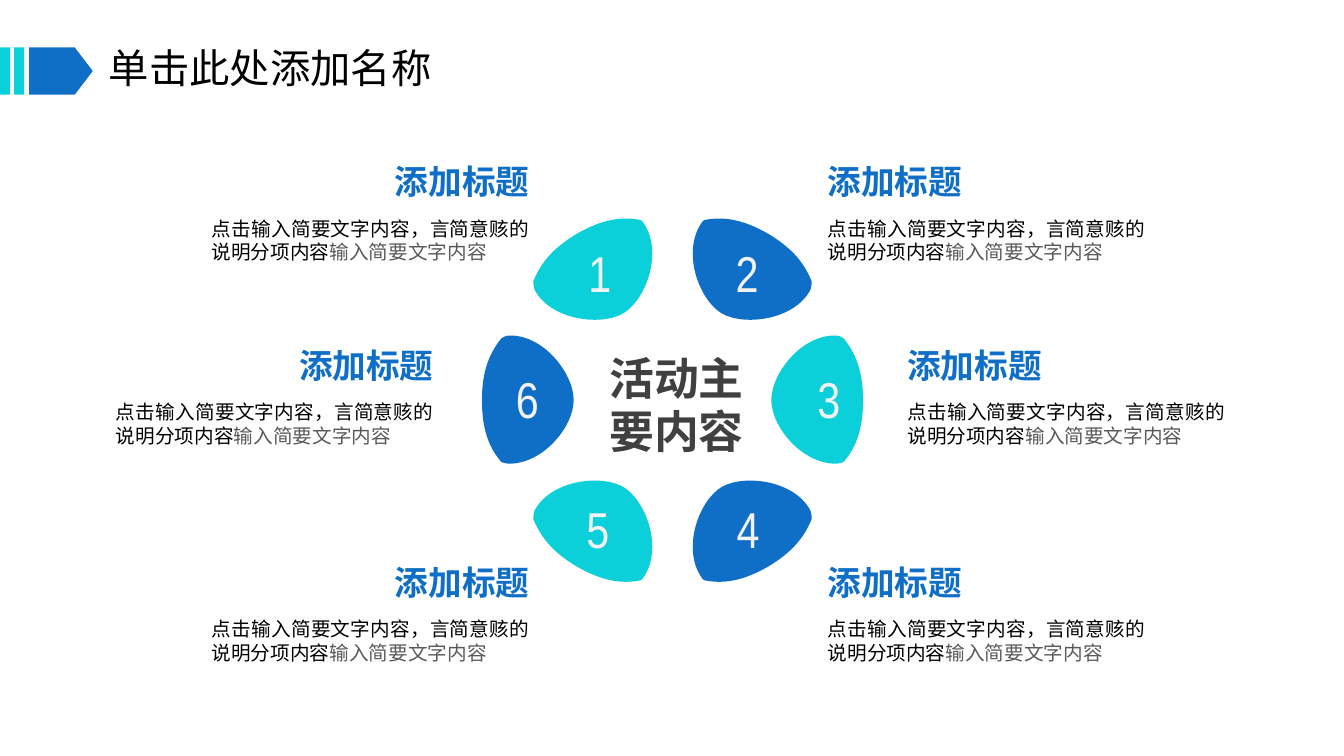
from dataclasses import dataclass

from pptx import Presentation
from pptx.dml.color import RGBColor
from pptx.enum.shapes import MSO_SHAPE as Preset
from pptx.enum.text import PP_ALIGN as Align
from pptx.oxml.ns import qn
from pptx.util import Inches, Pt


@dataclass(frozen=True)
class Theme:
    blue: str = "0F6FC6"
    cyan: str = "0BD0D9"
    black: str = "000000"
    dark: str = "404040"
    grey: str = "595959"
    pale: str = "F2F2F2"
    cjk: str = "Noto Sans CJK SC"
    latin: str = "Arial Narrow"
    title: float = 28.8
    centre: float = 32
    number: float = 36
    heading: float = 24
    body: float = 14


THEME = Theme()
CENTRE_X, CENTRE_Y = 6.67, 3.97
BODY_WIDTH, HEADING_WIDTH = 3.15, 1.94

# Start point, then three points for each Bézier curve.
CORNER_PETAL = [
    (8.05, 2.79),
    (7.98, 2.62), (7.87, 2.47), (7.62, 2.32),
    (7.36, 2.17), (7.17, 2.15), (7, 2.18),
    (6.98, 2.18), (6.95, 2.21), (6.94, 2.24),
    (6.77, 2.53), (6.94, 2.98), (7.16, 3.11),
    (7.39, 3.24), (7.89, 3.17), (8.04, 2.87),
    (8.05, 2.84), (8.05, 2.8), (8.05, 2.79),
]
SIDE_PETAL = [
    (8.37, 3.36),
    (8.48, 3.5), (8.56, 3.67), (8.56, 3.97),
    (8.56, 4.26), (8.49, 4.44), (8.37, 4.58),
    (8.36, 4.59), (8.31, 4.6), (8.29, 4.6),
    (7.95, 4.6), (7.65, 4.23), (7.65, 3.97),
    (7.65, 3.7), (7.96, 3.31), (8.3, 3.33),
    (8.32, 3.33), (8.36, 3.35), (8.37, 3.36),
]

# Outline, mirrored in x, mirrored in y, colour, number centre x and top.
PETALS = [
    (CORNER_PETAL, True, False, THEME.cyan, 5.95, 2.4),
    (CORNER_PETAL, False, False, THEME.blue, 7.41, 2.4),
    (SIDE_PETAL, False, False, THEME.cyan, 8.22, 3.65),
    (CORNER_PETAL, False, True, THEME.blue, 7.42, 4.94),
    (CORNER_PETAL, True, True, THEME.cyan, 5.93, 4.94),
    (SIDE_PETAL, True, False, THEME.blue, 5.23, 3.65),
]

# Left, top, and whether the heading is aligned to the right.
DESCRIPTIONS = [
    (2.1, 1.57, True),
    (8.21, 1.57, False),
    (9, 3.39, False),
    (8.21, 5.54, False),
    (2.1, 5.54, True),
    (1.15, 3.39, True),
]


def add_run(paragraph, text, *, size, color, font=THEME.cjk, bold=False):
    run = paragraph.add_run()
    run.text = text
    run.font.name = font
    run.font.size = Pt(size)
    run.font.bold = bold
    run.font.color.rgb = RGBColor.from_string(color)
    if font == THEME.cjk:
        east_asian = run.font._element.makeelement(qn("a:ea"), {"typeface": font})
        run.font._element.find(qn("a:latin")).addnext(east_asian)


class SlideBuilder:
    def __init__(self, slide, theme):
        self.slide = slide
        self.theme = theme

    def paint(self, shape, color):
        shape.shadow.inherit = False
        shape.fill.solid()
        shape.fill.fore_color.rgb = RGBColor.from_string(color)
        shape.line.fill.background()

    def text(self, runs, left, top, width, height, *, size, align=Align.LEFT,
             wrap=True, spacing=None, **style):
        """Place one paragraph made of (text, colour) runs."""
        box = self.slide.shapes.add_textbox(
            Inches(left), Inches(top), Inches(width), Inches(height))
        frame = box.text_frame
        frame.word_wrap = wrap
        frame.margin_left = frame.margin_top = 0
        frame.margin_right = frame.margin_bottom = 0
        paragraph = frame.paragraphs[0]
        paragraph.alignment = align
        if spacing:
            paragraph.line_spacing = Pt(spacing)
        for words, color in runs:
            add_run(paragraph, words, size=size, color=color, **style)

    def preset(self, kind, left, top, width, height, color):
        shape = self.slide.shapes.add_shape(
            kind, Inches(left), Inches(top), Inches(width), Inches(height))
        self.paint(shape, color)
        return shape

    def petal(self, outline, mirror_x, mirror_y, color):
        points = [
            (Inches(2 * CENTRE_X - x if mirror_x else x),
             Inches(2 * CENTRE_Y - y if mirror_y else y))
            for x, y in outline
        ]
        builder = self.slide.shapes.build_freeform(*points[0], scale=1.0)
        builder.add_line_segments(points[1:], close=True)
        shape = builder.convert_to_shape()
        # Join every three line segments into one cubic curve.
        lines = list(shape._element.iter(qn("a:lnTo")))[:len(points) - 1]
        for first, second, third in zip(lines[::3], lines[1::3], lines[2::3]):
            first.tag = qn("a:cubicBezTo")
            for line in (second, third):
                first.append(line[0])
                line.getparent().remove(line)
        self.paint(shape, color)

    def header(self, title):
        theme = self.theme
        self.text([(title, theme.black)], 1.08, 0.44, 5.51, 0.55,
                  size=theme.title, spacing=34)
        arrow = self.preset(Preset.PENTAGON, 0.29, 0.47, 0.63, 0.47, theme.blue)
        arrow.adjustments[0] = 0.38
        for left in (0.14, 0):
            self.preset(Preset.RECTANGLE, left, 0.47, 0.1, 0.47, theme.cyan)

    def number(self, value, centre, top):
        width = 0.26
        self.text([(str(value), self.theme.pale)], centre - width / 2, top,
                  width, 0.61, size=self.theme.number, align=Align.CENTER,
                  wrap=False, font=self.theme.latin)

    def description(self, left, top, to_right):
        theme = self.theme
        heading_left = left + BODY_WIDTH - HEADING_WIDTH if to_right else left
        self.text([("添加标题", theme.blue)], heading_left, top,
                  HEADING_WIDTH, 0.4, size=theme.heading, bold=True, spacing=31,
                  align=Align.RIGHT if to_right else Align.LEFT)
        self.text([("点击输入简要文字内容，言简意赅的说明分项内容", theme.black),
                   ("输入简要文字内容", theme.grey)],
                  left, top + 0.58, BODY_WIDTH, 0.47,
                  size=theme.body, align=Align.JUSTIFY, spacing=16.8)


def main():
    deck = Presentation()
    deck.slide_width, deck.slide_height = Inches(13.33), Inches(7.5)
    page = SlideBuilder(deck.slides.add_slide(deck.slide_layouts[6]), THEME)

    page.header("单击此处添加名称")
    page.text([("活动主要内容", THEME.dark)], 5.98, 3.48, 1.46, 1.08,
              size=THEME.centre, bold=True, align=Align.CENTER, spacing=38)
    for value, (outline, mirror_x, mirror_y, color, centre, top) in enumerate(PETALS, 1):
        page.petal(outline, mirror_x, mirror_y, color)
        page.number(value, centre, top)
    for left, top, to_right in DESCRIPTIONS:
        page.description(left, top, to_right)

    deck.save("out.pptx")


if __name__ == "__main__":
    main()
